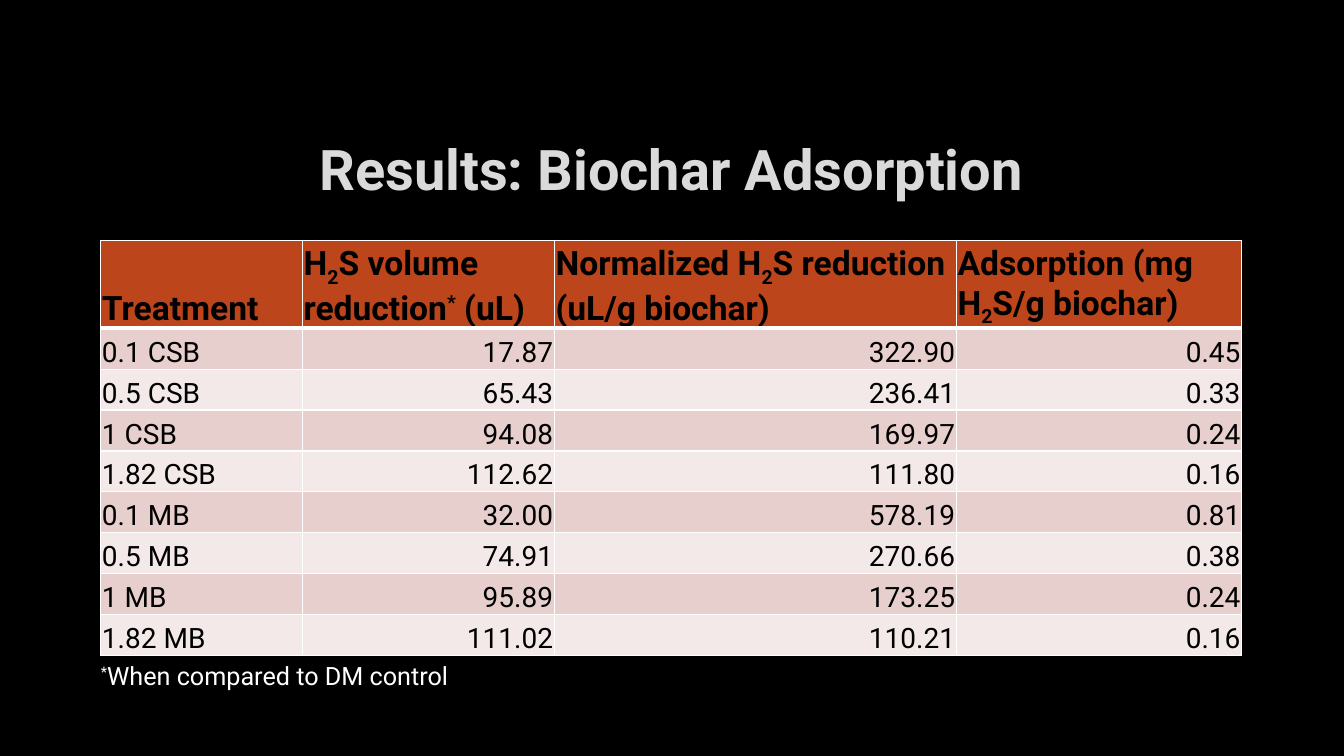
from lxml.etree import SubElement
from pptx import Presentation
from pptx.dml.color import RGBColor
from pptx.enum.text import MSO_ANCHOR, PP_ALIGN
from pptx.oxml.ns import qn
from pptx.util import Cm, Pt

BLACK = RGBColor(0x00, 0x00, 0x00)
WHITE = RGBColor(0xFF, 0xFF, 0xFF)
LIGHT_GREY = RGBColor(0xDA, 0xDA, 0xDA)
DARK_GREY = RGBColor(0x40, 0x40, 0x40)
RUST = RGBColor(0xBC, 0x45, 0x1B)
BANDS = [RGBColor(0xE7, 0xCF, 0xCD), RGBColor(0xF3, 0xE9, 0xE8)]

SUB, SUPER = -25000, 30000
HEADERS = [
    [("Treatment", 0)],
    [("H", 0), ("2", SUB), ("S volume reduction", 0), ("*", SUPER), (" (uL)", 0)],
    [("Normalized H", 0), ("2", SUB), ("S reduction (uL/g biochar)", 0)],
    [("Adsorption (mg H", 0), ("2", SUB), ("S/g biochar)", 0)],
]
RESULTS = [
    ("0.1 CSB", "17.87", "322.90", "0.45"),
    ("0.5 CSB", "65.43", "236.41", "0.33"),
    ("1 CSB", "94.08", "169.97", "0.24"),
    ("1.82 CSB", "112.62", "111.80", "0.16"),
    ("0.1 MB", "32.00", "578.19", "0.81"),
    ("0.5 MB", "74.91", "270.66", "0.38"),
    ("1 MB", "95.89", "173.25", "0.24"),
    ("1.82 MB", "111.02", "110.21", "0.16"),
]


def add_spans(para, pieces, size, color, bold=False):
    for text, baseline in pieces:
        span = para.add_run()
        span.text = text
        span.font.name = "Roboto"
        span.font.size = Pt(size)
        span.font.bold = bold
        span.font.color.rgb = color
        if baseline:
            span._r.get_or_add_rPr().set("baseline", str(baseline))


def add_line(parent, tag, width, color):
    line = SubElement(parent, qn(tag), w=str(Pt(width)))
    fill = SubElement(line, qn("a:solidFill"))
    return SubElement(fill, qn("a:srgbClr"), val=str(color))


deck = Presentation()
deck.slide_width, deck.slide_height = Cm(33.87), Cm(19.05)
page = deck.slides.add_slide(deck.slide_layouts[6])
page.background.fill.solid()
page.background.fill.fore_color.rgb = BLACK

# Title with a faint outline
title = page.shapes.add_textbox(Cm(2.54), Cm(2.9), Cm(28.75), Cm(2.69)).text_frame
title.word_wrap = True
title.vertical_anchor = MSO_ANCHOR.MIDDLE
para = title.paragraphs[0]
para.alignment = PP_ALIGN.CENTER
add_spans(para, [("Results: Biochar Adsorption", 0)], 40, LIGHT_GREY, bold=True)
properties = para.runs[0]._r.get_or_add_rPr()
outline_color = add_line(properties, "a:ln", 0.75, DARK_GREY)
SubElement(outline_color, qn("a:alpha"), val="10000")
properties.insert(0, properties.find(qn("a:ln")))

# Results table
rows = [HEADERS] + [[[(value, 0)] for value in result] for result in RESULTS]
table = page.shapes.add_table(
    len(rows), len(HEADERS), Cm(2.54), Cm(6.07), Cm(28.75), Cm(10.34)).table
for column, width in zip(table.columns, (5.08, 6.35, 10.13, 7.19)):
    column.width = Cm(width)

for r, row in enumerate(rows):
    is_header = r == 0
    table.rows[r].height = Cm(2.1 if is_header else 1.03)
    for c, pieces in enumerate(row):
        cell = table.cell(r, c)
        cell.vertical_anchor = MSO_ANCHOR.BOTTOM
        cell.margin_left = cell.margin_right = cell.margin_top = Cm(0.03)
        cell.margin_bottom = 0

        # White grid, heavier between the header and the values
        for side in "LRTB":
            heavy = (is_header and side == "B") or (r == 1 and side == "T")
            add_line(cell._tc.get_or_add_tcPr(), f"a:ln{side}", 3 if heavy else 1, WHITE)
        cell.fill.solid()
        cell.fill.fore_color.rgb = RUST if is_header else BANDS[(r - 1) % 2]

        para = cell.text_frame.paragraphs[0]
        para.alignment = PP_ALIGN.LEFT if is_header or c == 0 else PP_ALIGN.RIGHT
        add_spans(para, pieces, 24 if is_header else 20, BLACK, bold=is_header)

# Footnote
note = page.shapes.add_textbox(Cm(2.29), Cm(16.51), Cm(29.26), Cm(1.02)).text_frame
note.word_wrap = True
add_spans(note.paragraphs[0], [("*", SUPER), ("When compared to DM control", 0)], 18, WHITE)

deck.save("out.pptx")
